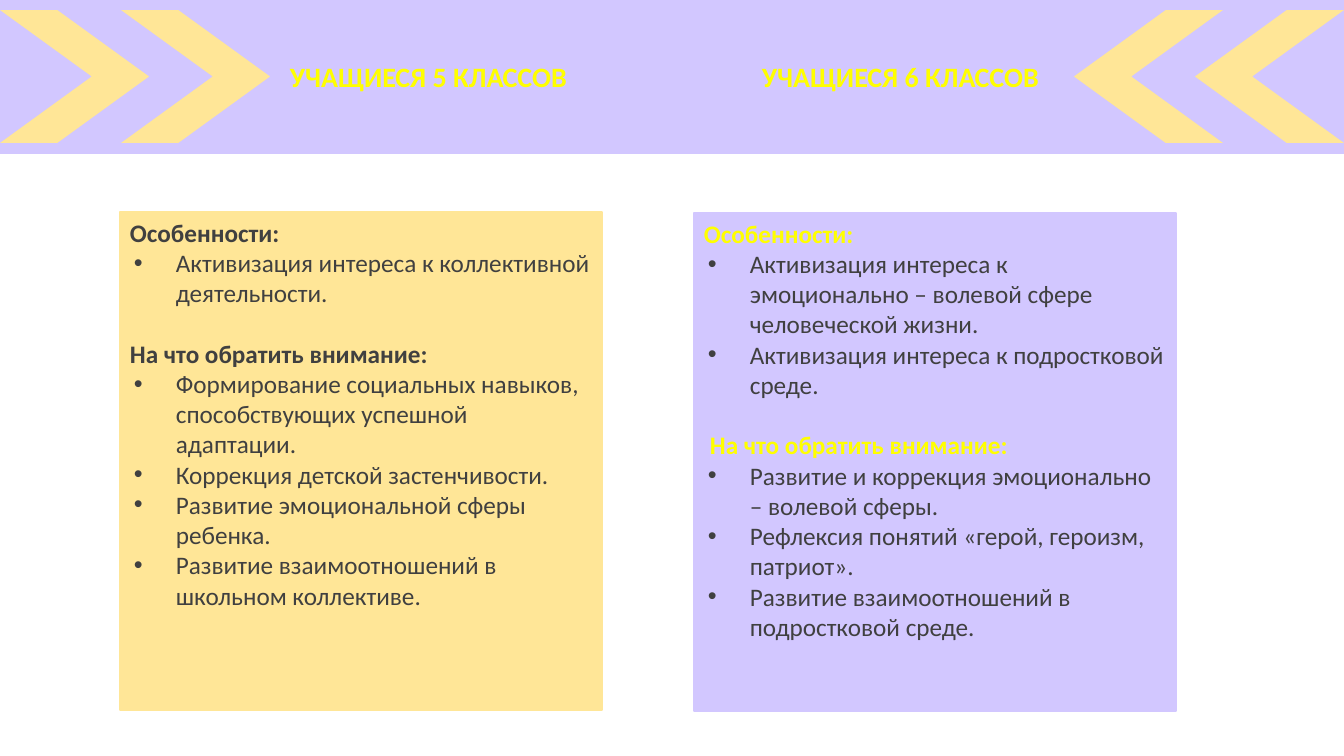
from lxml import etree
from pptx import Presentation
from pptx import util as u
from pptx.dml.color import RGBColor
from pptx.enum import shapes, text
from pptx.oxml import ns

# Content
FONT = "Calibri"
SAND, LILAC, BANNER = "FFE697", "D2C7FF", "B6A4FF"
YELLOW, GREY = "FFFF00", "404040"
FEATURES, ATTENTION = "Особенности:", "На что обратить внимание:"

# Title, title left, card left, card top, fill, heading colour,
# second heading indent, sections
COLUMNS = [
    ("УЧАЩИЕСЯ 5 КЛАССОВ", 255, 120, 212, SAND, GREY, 0, [
        (FEATURES, ["Активизация интереса к коллективной деятельности."]),
        (ATTENTION, [
            "Формирование социальных навыков, способствующих успешной адаптации.",
            "Коррекция детской застенчивости.",
            "Развитие эмоциональной сферы ребенка.",
            "Развитие взаимоотношений в школьном коллективе."]),
    ]),
    ("УЧАЩИЕСЯ 6 КЛАССОВ", 727, 694, 213, LILAC, YELLOW, 6, [
        (FEATURES, [
            "Активизация интереса к эмоционально – волевой сфере человеческой жизни.",
            "Активизация интереса к подростковой среде."]),
        (ATTENTION, [
            "Развитие и коррекция эмоционально – волевой сферы.",
            "Рефлексия понятий «герой, героизм, патриот».",
            "Развитие взаимоотношений в подростковой среде."]),
    ]),
]

# Geometry in px
WIDTH, HEIGHT = 1344, 756
BANNER_HEIGHT = 154
CHEVRON_TOP, CHEVRON_WIDTH, CHEVRON_HEIGHT, CHEVRON_STEP = 10, 149, 133, 121
TITLE_TOP, TITLE_WIDTH, TITLE_HEIGHT = 55, 347, 44
CARD_WIDTH, CARD_HEIGHT = 482, 498
BULLET_MARGIN, BULLET_HANG = 46, 42


def px(length):
    return u.Emu(round(length * 914400 / 100.8))


def color(value):
    return RGBColor.from_string(value)


presentation = Presentation()
presentation.slide_width, presentation.slide_height = px(WIDTH), px(HEIGHT)
slide = presentation.slides.add_slide(presentation.slide_layouts[6])


def add_block(kind, left, top, width, height, fill, line=None):
    shape = slide.shapes.add_shape(kind, px(left), px(top), px(width), px(height))
    shape.shadow.inherit = False
    shape.fill.solid()
    shape.fill.fore_color.rgb = color(fill)
    if line:
        shape.line.color.rgb = color(line)
        shape.line.width = u.Pt(1)
    else:
        shape.line.fill.background()
    return shape


def add_run(paragraph, words, size, value, bold):
    run = paragraph.add_run()
    run.text = words
    run.font.name = FONT
    run.font.size = u.Pt(size)
    run.font.bold = bold
    run.font.color.rgb = color(value)


def set_indent(paragraph, margin, hang=0, bullet=None):
    properties = paragraph._p.get_or_add_pPr()
    properties.set("marL", str(px(margin)))
    properties.set("indent", str(px(-hang)))
    if bullet:
        etree.SubElement(properties, ns.qn("a:buFont"), typeface="Arial")
        etree.SubElement(properties, ns.qn("a:buChar"), char=bullet)


def add_title(words, left):
    box = slide.shapes.add_textbox(px(left), px(TITLE_TOP), px(TITLE_WIDTH), px(TITLE_HEIGHT))
    frame = box.text_frame
    frame.word_wrap = True
    frame.auto_size = text.MSO_AUTO_SIZE.SHAPE_TO_FIT_TEXT
    paragraph = frame.paragraphs[0]
    paragraph.alignment = text.PP_ALIGN.CENTER
    add_run(paragraph, words, 20, YELLOW, True)


def add_card(left, top, fill, heading_color, heading_indent, sections):
    card = add_block(shapes.MSO_SHAPE.RECTANGLE, left, top, CARD_WIDTH, CARD_HEIGHT, fill, fill)
    frame = card.text_frame
    frame.word_wrap = True
    frame.vertical_anchor = text.MSO_ANCHOR.TOP
    for index, (heading, points) in enumerate(sections):
        paragraph = frame.add_paragraph() if index else frame.paragraphs[0]
        paragraph.alignment = text.PP_ALIGN.LEFT
        if index:
            paragraph.space_before = u.Pt(21.6)
            set_indent(paragraph, heading_indent)
        add_run(paragraph, heading, 18, heading_color, True)
        for point in points:
            paragraph = frame.add_paragraph()
            paragraph.alignment = text.PP_ALIGN.LEFT
            set_indent(paragraph, BULLET_MARGIN, BULLET_HANG, "•")
            add_run(paragraph, point, 18, GREY, False)


# Translucent banner
banner = add_block(shapes.MSO_SHAPE.RECTANGLE, 0, 0, WIDTH, BANNER_HEIGHT, BANNER)
banner_color = banner._element.spPr.find(".//" + ns.qn("a:srgbClr"))
etree.SubElement(banner_color, ns.qn("a:alpha"), val="61000")

# Chevrons, mirrored at both ends of the banner
for mirrored in (False, True):
    for step in range(2):
        offset = step * CHEVRON_STEP
        left = WIDTH - CHEVRON_WIDTH - offset if mirrored else offset
        chevron = add_block(shapes.MSO_SHAPE.CHEVRON, left, CHEVRON_TOP,
                            CHEVRON_WIDTH, CHEVRON_HEIGHT, SAND)
        chevron.adjustments[0] = 0.69
        if mirrored:
            chevron._element.spPr.find(ns.qn("a:xfrm")).set("flipH", "1")

# Titles and cards
for title, title_left, *card_parts in COLUMNS:
    add_title(title, title_left)
    add_card(*card_parts)

presentation.save("out.pptx")
